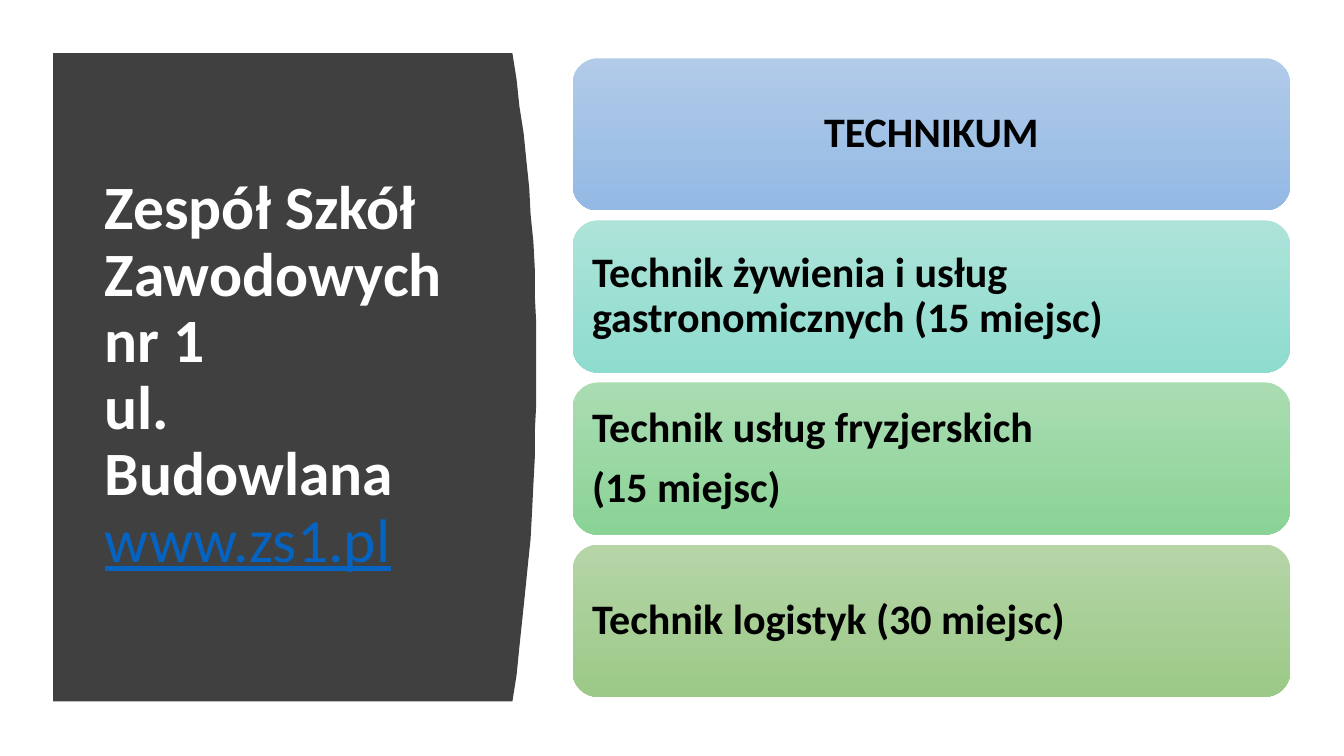
import pptx
import pptx.util
import pptx.dml.color
import pptx.enum.shapes
import pptx.enum.text

Pt = pptx.util.Pt
RGBColor = pptx.dml.color.RGBColor
PP_ALIGN = pptx.enum.text.PP_ALIGN
MIDDLE = pptx.enum.text.MSO_ANCHOR.MIDDLE

DARK = RGBColor(0x40, 0x40, 0x40)
WHITE = RGBColor(0xFF, 0xFF, 0xFF)
BLACK = RGBColor(0x00, 0x00, 0x00)
LINK_BLUE = RGBColor(0x05, 0x63, 0xC1)
BLUE = (RGBColor(0xB1, 0xCB, 0xE9), RGBColor(0x93, 0xB9, 0xE4))
TEAL = (RGBColor(0xAD, 0xE3, 0xD9), RGBColor(0x8E, 0xDC, 0xCE))
GREEN = (RGBColor(0xAA, 0xDC, 0xB2), RGBColor(0x8A, 0xD3, 0x96))
OLIVE = (RGBColor(0xB5, 0xD5, 0xA7), RGBColor(0x9C, 0xC9, 0x87))


def format_run(r, size, color, bold=True):
    r.font.name = "Calibri"
    r.font.size = Pt(size)
    r.font.bold = bold
    r.font.color.rgb = color


prs = pptx.Presentation()
prs.slide_width, prs.slide_height = Pt(960), Pt(540)
s = prs.slides.add_slide(prs.slide_layouts[5])

# Dark panel whose right side bulges in two half parabolas
LEFT, TOP, BOTTOM = 38, 37.5, 501
EDGE, BULGE, PEAK = 366, 17.2, 259
STEPS = 24
curve = []
for i in range(STEPS + 1):
    y = TOP + (BOTTOM - TOP) * i / STEPS
    reach = PEAK - TOP if y < PEAK else BOTTOM - PEAK
    curve.append((EDGE + BULGE * (1 - ((y - PEAK) / reach) ** 2), y))
fb = s.shapes.build_freeform(LEFT, TOP, scale=Pt(1))
fb.add_line_segments(curve + [(LEFT, BOTTOM)], close=True)
panel = fb.convert_to_shape()
panel.shadow.inherit = False
panel.fill.solid()
panel.fill.fore_color.rgb = DARK
panel.line.fill.background()

# School name and address, in front of the panel
title = s.shapes.title
s.shapes._spTree.append(title._element)
title.left, title.top, title.width, title.height = Pt(67.7), Pt(80), Pt(269.3), Pt(377.3)
tf = title.text_frame
tf.text = "Zespół Szkół Zawodowych nr 1\vul. Budowlana\vwww.zs1.pl"
tf.word_wrap = True
tf.auto_size = pptx.enum.text.MSO_AUTO_SIZE.NONE
tf.vertical_anchor = MIDDLE
p = tf.paragraphs[0]
p.alignment = PP_ALIGN.LEFT
p.line_spacing = 0.9
for r in p.runs:
    format_run(r, 44, WHITE)
address = p.runs[-1]
format_run(address, 44, LINK_BLUE, bold=False)
address.font.underline = True

# Course cards
cards = [
    ("TECHNIKUM", BLUE, PP_ALIGN.CENTER),
    ("Technik żywienia i usług gastronomicznych (15 miejsc)", TEAL, PP_ALIGN.LEFT),
    ("Technik usług fryzjerskich\n(15 miejsc)", GREEN, PP_ALIGN.LEFT),
    ("Technik logistyk (30 miejsc)", OLIVE, PP_ALIGN.LEFT),
]
for i, (text, colors, align) in enumerate(cards):
    sp = s.shapes.add_shape(pptx.enum.shapes.MSO_SHAPE.ROUNDED_RECTANGLE,
                            Pt(409), Pt(41.6 + 115.8 * i), Pt(512.6), Pt(108.7))
    sp.shadow.inherit = False
    sp.line.fill.background()
    sp.fill.gradient()
    sp.fill.gradient_angle = 270
    for stop, color, position in zip(sp.fill.gradient_stops, colors, (0, 1)):
        stop.color.rgb = color
        stop.position = position
    tf = sp.text_frame
    tf.text = text
    tf.word_wrap = True
    tf.vertical_anchor = MIDDLE
    tf.margin_left = tf.margin_right = tf.margin_top = tf.margin_bottom = Pt(8.6)
    for p in tf.paragraphs:
        p.alignment = align
        p.line_spacing = 0.9
        p.space_after = Pt(10.5)
        format_run(p.runs[0], 30, BLACK)

prs.save("out.pptx")
